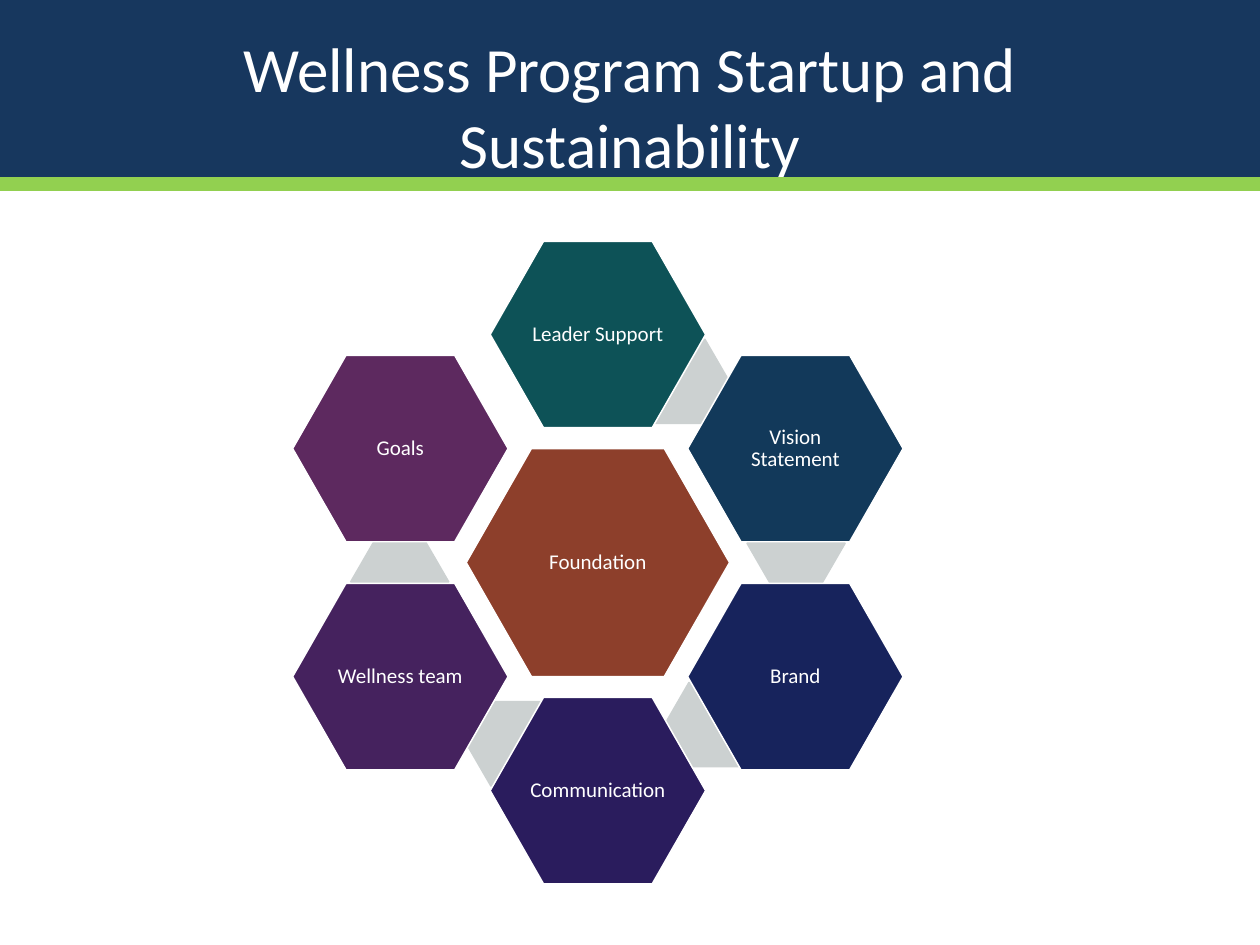
from math import cos, radians, sin

from pptx import Presentation
from pptx.dml.color import RGBColor
from pptx.enum.shapes import MSO_CONNECTOR, MSO_SHAPE
from pptx.enum.text import MSO_ANCHOR, MSO_AUTO_SIZE, PP_ALIGN
from pptx.oxml.ns import qn
from pptx.util import Inches, Pt
from lxml.etree import SubElement

COLORS = {
    "band": "17375E", "rule": "92D050", "white": "FFFFFF",
    "link": "CCD1D1", "core": "8D3F2B",
}
FONT = "Calibri"

# Outer steps, clockwise from the top
STEPS = [
    ("Leader Support", "0D5257"),
    ("Vision Statement", "12395A"),
    ("Brand", "17235C"),
    ("Communication", "2A1C5D"),
    ("Wellness team", "45225E"),
    ("Goals", "5D295F"),
]


def rgb(value):
    return RGBColor.from_string(value)


def add_filled(s, kind, x, y, w, h, color):
    sp = s.shapes.add_shape(kind, Inches(x), Inches(y), Inches(w), Inches(h))
    sp.shadow.inherit = False
    sp.fill.solid()
    sp.fill.fore_color.rgb = rgb(color)
    sp.line.fill.background()
    return sp


def style_text(tf, text, size):
    tf.text = text
    tf.word_wrap = True
    tf.auto_size = MSO_AUTO_SIZE.NONE
    tf.vertical_anchor = MSO_ANCHOR.MIDDLE
    p = tf.paragraphs[0]
    p.alignment = PP_ALIGN.CENTER
    p.font.name = FONT
    p.font.size = Pt(size)
    p.font.color.rgb = rgb(COLORS["white"])
    return p


def add_hexagon(s, cx, cy, w, h, color, adj=0.286):
    sp = add_filled(s, MSO_SHAPE.HEXAGON, cx - w / 2, cy - h / 2, w, h, color)
    sp.adjustments[0] = adj
    return sp


def add_step(s, cx, cy, w, h, text, color):
    sp = add_hexagon(s, cx, cy, w, h, color)
    sp.line.color.rgb = rgb(COLORS["white"])
    sp.line.width = Pt(0.85)
    tf = sp.text_frame
    tf.margin_left = tf.margin_right = Inches(0.02)
    tf.margin_top = tf.margin_bottom = Inches(0.02)
    style_text(tf, text, 12).line_spacing = 0.9


def on_circle(cx, cy, radius, degrees):
    """Point on a circle, measured clockwise from the top."""
    a = radians(degrees)
    return cx + radius * sin(a), cy - radius * cos(a)


def build_header(s, x, y, w, h):
    add_filled(s, MSO_SHAPE.RECTANGLE, x, y, w, h, COLORS["band"])

    # Title, raised above the band
    title = s.shapes.title
    title.left, title.top = Inches(x + 0.5), Inches(y + 0.21)
    title.width, title.height = Inches(w - 1), Inches(h - 0.21)
    style_text(title.text_frame, "Wellness Program Startup and Sustainability", 36)
    s.shapes._spTree.append(title._element)


def build_cycle(s, x, y, w, h):
    cx, cy = x + w / 2, y + h / 2
    add_step(s, cx, cy, 2.09, 1.81, "Foundation", COLORS["core"])

    # Links between neighbouring steps
    for i in range(len(STEPS) - 1):
        px, py = on_circle(cx, cy, 1.58, 24.5 + 60 * i)
        add_hexagon(s, px, py, 0.79, 0.68, COLORS["link"], 0.289)

    # Outer steps
    for i, (text, color) in enumerate(STEPS):
        px, py = on_circle(cx, cy, 1.81, 60 * i)
        add_step(s, px, py, 1.71, 1.48, text, color)


def build_rule(s, x, y, w):
    line = s.shapes.add_connector(
        MSO_CONNECTOR.STRAIGHT, Inches(x), Inches(y), Inches(x + w), Inches(y))
    line.line.color.rgb = rgb(COLORS["rule"])
    line.line.width = Pt(8)
    SubElement(line._element.spPr, qn("a:effectLst"))


def main():
    prs = Presentation()
    prs.slide_width, prs.slide_height = Inches(10), Inches(7.5)
    s = prs.slides.add_slide(prs.slide_layouts[5])
    build_header(s, 0, 0, 10, 1.46)
    build_cycle(s, 2.31, 1.92, 4.87, 5.09)
    build_rule(s, 0, 1.46, 10)
    prs.save("out.pptx")


if __name__ == "__main__":
    main()
